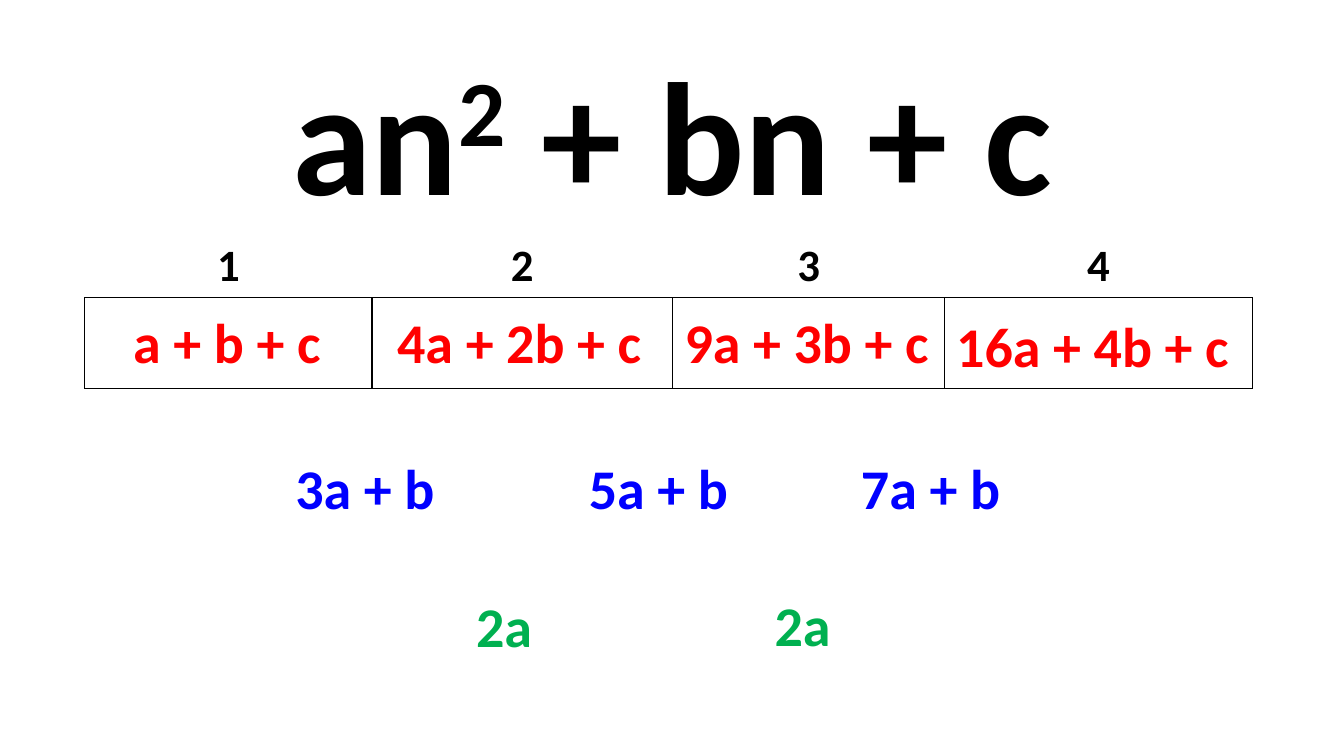
from dataclasses import dataclass

from lxml import etree
from pptx import Presentation
from pptx.dml.color import RGBColor
from pptx.enum import text
from pptx.oxml import ns
from pptx.util import Inches, Pt


@dataclass(frozen=True)
class Theme:
    font: str = "Calibri"
    black: str = "000000"
    red: str = "FF0000"
    blue: str = "0000FF"
    green: str = "00B050"
    title: int = 115
    header: int = 32
    term: int = 40
    border: int = 1


THEME = Theme()
COLUMNS = (2.85, 2.98, 2.7, 3.05)
ROWS = (0.63, 0.9)
TERM_HEIGHT = 0.77

# Each expression: text, left, top, width
TERMS = (
    ("a + b + c", 0.87, 3, 2.76),
    ("4a + 2b + c", 3.77, 3, 2.76),
    ("9a + 3b + c", 6.62, 3, 2.76),
    ("16a + 4b + c", 9.34, 3.04, 2.99),
)
FIRST_DIFFERENCES = (
    ("3a + b", 2.24, 4.45, 2.76),
    ("5a + b", 5.7, 4.45, 1.66),
    ("7a + b", 8.4, 4.45, 1.66),
)
SECOND_DIFFERENCES = (
    ("2a", 4.38, 5.82, 1.24),
    ("2a", 7.34, 5.81, 1.24),
)


def style_paragraph(p, size, color):
    p.alignment = text.PP_ALIGN.CENTER
    p.font.name = THEME.font
    p.font.size = Pt(size)
    p.font.bold = True
    p.font.color.rgb = RGBColor.from_string(color)


def add_text(s, runs, left, top, width, height, size, color):
    """Add a centred line; runs are (text, baseline in 1/1000 percent)."""
    box = s.shapes.add_textbox(*map(Inches, (left, top, width, height)))
    tf = box.text_frame
    tf.word_wrap = True
    tf.auto_size = text.MSO_AUTO_SIZE.SHAPE_TO_FIT_TEXT
    p = tf.paragraphs[0]
    style_paragraph(p, size, color)
    for content, baseline in runs:
        r = p.add_run()
        r.text = content
        if baseline:
            r.font._element.set("baseline", str(baseline))


def add_terms(s, terms, color):
    for content, left, top, width in terms:
        add_text(s, [(content, 0)], left, top, width, TERM_HEIGHT, THEME.term, color)


def set_borders(cell, sides):
    """Draw the given sides (letters of LRTB); lines precede the cell fill."""
    tc_pr = cell._tc.get_or_add_tcPr()
    for i, side in enumerate(sides):
        ln = etree.Element(ns.qn(f"a:ln{side}"), w=str(Pt(THEME.border)))
        fill = etree.SubElement(ln, ns.qn("a:solidFill"))
        etree.SubElement(fill, ns.qn("a:srgbClr"), val=THEME.black)
        tc_pr.insert(i, ln)


def add_sequence_table(s, left, top):
    frame = s.shapes.add_table(
        len(ROWS), len(COLUMNS), Inches(left), Inches(top),
        Inches(sum(COLUMNS)), Inches(sum(ROWS)))
    table = frame.table
    table.first_row = table.horz_banding = False
    for row, height in zip(table.rows, ROWS):
        row.height = Inches(height)
    for i, width in enumerate(COLUMNS):
        table.columns[i].width = Inches(width)
        position, value = table.cell(0, i), table.cell(1, i)
        position.text = str(i + 1)
        style_paragraph(position.text_frame.paragraphs[0], THEME.header, THEME.black)
        for cell, sides in ((position, "B"), (value, "LRTB")):
            cell.fill.background()
            set_borders(cell, sides)


def main():
    prs = Presentation()
    prs.slide_width, prs.slide_height = Inches(13.33), Inches(7.5)
    s = prs.slides.add_slide(prs.slide_layouts[6])

    # General form of the quadratic sequence
    add_text(s, [("an", 0), ("2", 30000), (" + bn + c", 0)],
             2.57, 0.29, 8.19, 2.04, THEME.title, THEME.black)

    # Positions and terms
    add_sequence_table(s, 0.84, 2.32)
    add_terms(s, TERMS, THEME.red)

    # Differences
    add_terms(s, FIRST_DIFFERENCES, THEME.blue)
    add_terms(s, SECOND_DIFFERENCES, THEME.green)

    prs.save("out.pptx")


if __name__ == "__main__":
    main()
